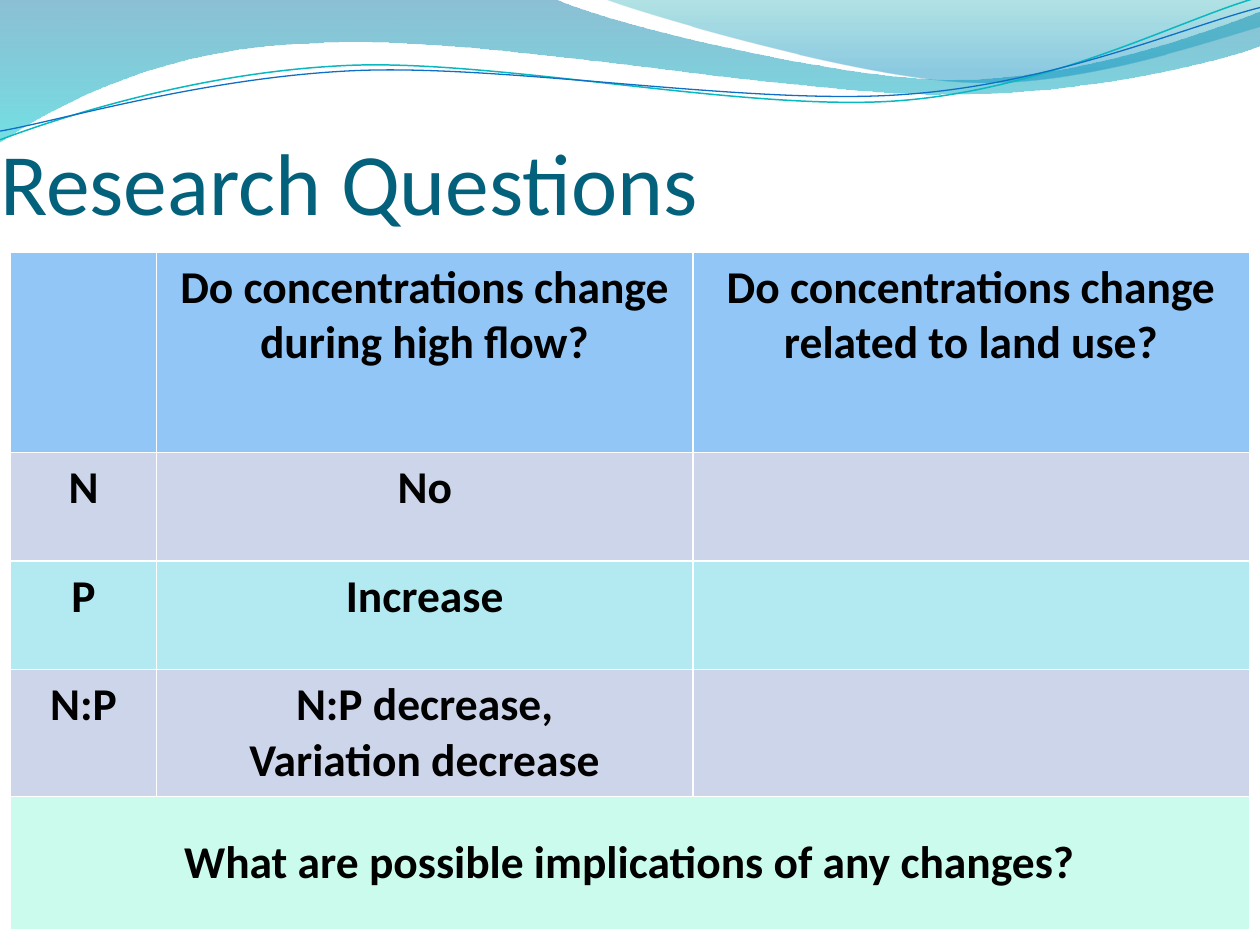
"""Build the Research Questions slide with its wave header and summary table."""
from itertools import chain
from lxml import etree
from pptx import Presentation
from pptx.dml.color import RGBColor
from pptx.enum import text
from pptx.oxml import ns
from pptx.util import Pt

BLACK = RGBColor(0x00, 0x00, 0x00)
TITLE_TEAL = RGBColor(0x04, 0x61, 0x7B)
HEADER_BLUE = RGBColor(0x91, 0xC6, 0xF7)
BAND_LAVENDER = RGBColor(0xCC, 0xD5, 0xEA)
BAND_AQUA = RGBColor(0xB3, 0xEA, 0xF2)
FOOTER_MINT = RGBColor(0xCA, 0xFB, 0xED)
DEEP_BLUE = RGBColor(0x00, 0x74, 0xA1)
TURQUOISE = RGBColor(0x00, 0xC6, 0xCF)
SEA_GREEN = RGBColor(0x00, 0xA1, 0xA9)
SKY_BLUE = RGBColor(0x00, 0x8B, 0xBF)
LINE_TEAL = RGBColor(0x0A, 0xB8, 0xBF)
LINE_BLUE = RGBColor(0x0F, 0x6F, 0xC6)
FONT = "Calibri"

prs = Presentation()
prs.slide_width, prs.slide_height = Pt(720), Pt(540)
slide = prs.slides.add_slide(prs.slide_layouts[5])


def draw_curve(start, segments, close):
    """Draw segments of one point (straight) or three points (Bezier)."""
    builder = slide.shapes.build_freeform(Pt(start[0]), Pt(start[1]))
    builder.add_line_segments([(Pt(x), Pt(y)) for x, y in chain(*segments)], close=close)
    curve = builder.convert_to_shape()
    curve.shadow.inherit = False
    steps = iter(curve._element.xpath(".//a:lnTo"))
    for segment in segments:
        first = next(steps)
        if len(segment) == 3:
            bezier = etree.Element(ns.qn("a:cubicBezTo"))
            first.addprevious(bezier)
            for step in (first, next(steps), next(steps)):
                bezier.append(step[0])
                step.getparent().remove(step)
    return curve


waves = [
    ((0, 0), [
        [(316.8, -0.7)],
        [(342.7, 12.2), (478.1, 45.4), (545.8, 45.4)],
        [(614.2, 45.4), (689.8, 18.7), (720, 6.5)],
        [(720.7, 25.9)],
        [(707.8, 31.7), (626.4, 54.7), (537.1, 54)],
        [(447.8, 54), (275, 20.2), (185, 24.5)],
        [(92.9, 25.9), (33.1, 59.8), (-0.7, 81.4)],
    ], [(0, DEEP_BLUE, 45), (1, TURQUOISE, 55)]),
    ((344.9, -0.7), [
        [(366.5, 7.9), (491, 44.6), (553.7, 46.8)],
        [(616.3, 49.7), (691.9, 23), (720, 15.1)],
        [(720, 0)],
    ], [(0, SEA_GREEN, 30), (0.8, SKY_BLUE, 45)]),
]
for start, segments, stops in waves:
    wave = draw_curve(start, segments, True)
    wave.line.fill.background()
    wave.fill.gradient()
    wave.fill.gradient_angle = 270
    for stop, (position, color, opacity) in zip(wave.fill.gradient_stops, stops):
        stop.position = position
        stop.color.rgb = color
    for tint, (position, color, opacity) in zip(wave._element.spPr.xpath(".//a:srgbClr"), stops):
        etree.SubElement(tint, ns.qn("a:alpha"), val=str(opacity * 1000))

ripples = [
    ((0, 79.9), [
        [(34.6, 67), (113.8, 41), (199.4, 37.4)],
        [(284.4, 33.8), (427, 64.1), (513.4, 57.6)],
        [(599.8, 51.1), (675.4, 10.8), (718.6, -1.4)],
    ], LINE_TEAL, 0.85),
    ((0, 74.9), [
        [(33.8, 69.1), (118.1, 43.9), (203.8, 40.3)],
        [(290.2, 36.7), (429.8, 60.5), (516.2, 54)],
        [(601.9, 48.2), (677.5, 15.1), (720, 4.3)],
    ], LINE_BLUE, 0.75),
]
for start, segments, color, width in ripples:
    ripple = draw_curve(start, segments, False)
    ripple.fill.background()
    ripple.line.color.rgb = color
    ripple.line.width = Pt(width)

heading = slide.shapes.title
heading.left, heading.top, heading.width, heading.height = Pt(0), Pt(59.8), Pt(408), Pt(73.4)
heading_frame = heading.text_frame
heading_frame.text = "Research Questions"
heading_frame.auto_size = text.MSO_AUTO_SIZE.NONE
heading_frame.vertical_anchor = text.MSO_ANCHOR.BOTTOM
heading_frame.margin_left = heading_frame.margin_right = heading_frame.margin_bottom = 0
heading_frame.margin_top = Pt(3.6)
heading_line = heading_frame.paragraphs[0]
heading_line.alignment = text.PP_ALIGN.LEFT
heading_font = heading_line.runs[0].font
heading_font.name, heading_font.size = FONT, Pt(50)
heading_font.color.rgb = TITLE_TEAL

column_widths = [83.5, 306.5, 318]
answers = [
    (114.5, HEADER_BLUE, ["", "Do concentrations change during high flow?",
                          "Do concentrations change related to land use?"]),
    (62, BAND_LAVENDER, ["N", "No", ""]),
    (62, BAND_AQUA, ["P", "Increase", ""]),
    (72, BAND_LAVENDER, ["N:P", "N:P decrease,\nVariation decrease", ""]),
    (76.5, FOOTER_MINT, ["What are possible implications of any changes?", "", ""]),
]
summary = slide.shapes.add_table(
    len(answers), len(column_widths), Pt(6), Pt(144), Pt(sum(column_widths)),
    Pt(sum(height for height, _, _ in answers))).table
summary.horz_banding = False
for column, width in zip(summary.columns, column_widths):
    column.width = Pt(width)
for row, (height, color, entries) in zip(summary.rows, answers):
    row.height = Pt(height)
    for cell, entry in zip(row.cells, entries):
        cell.fill.solid()
        cell.fill.fore_color.rgb = color
        cell.margin_left = cell.margin_right = Pt(9)
        cell.margin_top = cell.margin_bottom = Pt(4.5)
        if not entry:
            continue
        cell.text_frame.text = entry
        for paragraph in cell.text_frame.paragraphs:
            paragraph.alignment = text.PP_ALIGN.CENTER
            font = paragraph.runs[0].font
            font.name, font.size, font.bold = FONT, Pt(26), True
            font.color.rgb = BLACK

implications = summary.cell(4, 0)
implications.merge(summary.cell(4, 2))
implications.vertical_anchor = text.MSO_ANCHOR.MIDDLE

prs.save("out.pptx")
